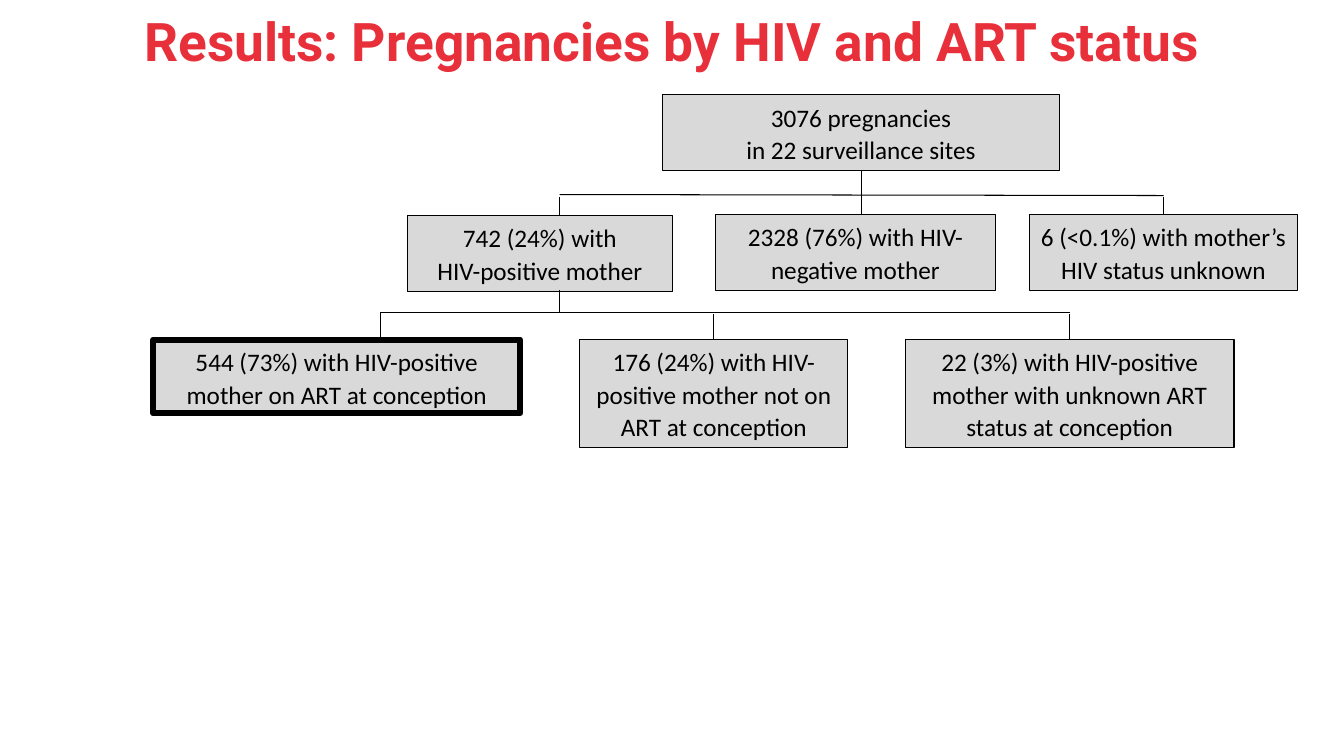
from dataclasses import dataclass
from typing import Optional

import pptx
import pptx.dml.color
import pptx.enum.shapes
import pptx.enum.text
import pptx.oxml
import pptx.oxml.ns
import pptx.util

PX = 9144  # EMU in one px, 100 px to the inch
COLORS = {"title": "E8303B", "fill": "D9D9D9", "ink": "000000"}
TOP, BOTTOM = 0, 2


@dataclass
class Box:
    text: str
    x: int
    y: int
    w: int
    h: int
    line: float = 0.75
    after: int = 0


@dataclass
class Link:
    x1: int
    y1: int
    x2: int
    y2: int
    box: Optional[str] = None  # box joined at the start
    side: int = TOP


# Groups of pregnancies, by level
BOXES = {
    "all": Box("3076 pregnancies\nin 22 surveillance sites", 657, 94, 394, 75),
    "pos": Box("742 (24%) with\nHIV-positive mother", 404, 214, 263, 75),
    "neg": Box("2328 (76%) with HIV-negative mother", 710, 213, 277, 75),
    "unknown": Box("6 (<0.1%) with mother’s HIV status unknown",
                   1021, 213, 266, 75),
    "art": Box("544 (73%) with HIV-positive mother on ART at conception",
               152, 337, 364, 73, line=4.5),
    "no art": Box("176 (24%) with HIV-positive mother not on ART at conception",
                  575, 337, 266, 107, after=8),
    "art unknown": Box("22 (3%) with HIV-positive mother with unknown ART "
                       "status at conception", 898, 337, 326, 107, after=8),
}

LINKS = [
    # HIV status
    Link(854, 169, 854, 213, "all", BOTTOM),
    Link(555, 193, 1154, 194),
    Link(555, 214, 555, 195),
    Link(1154, 213, 1154, 195, "unknown"),
    # ART status
    Link(555, 288, 555, 310),
    Link(377, 310, 1061, 310),
    Link(377, 337, 377, 310),
    Link(708, 337, 708, 312, "no art"),
    Link(1061, 337, 1061, 312, "art unknown"),
]


def px(n: int) -> pptx.util.Emu:
    return pptx.util.Emu(n * PX)


def color(name: str) -> pptx.dml.color.RGBColor:
    return pptx.dml.color.RGBColor.from_string(COLORS[name])


def style(par, face: str, size: int, tint: str, bold: bool = False) -> None:
    par.alignment = pptx.enum.text.PP_ALIGN.CENTER
    font = par.font
    font.name, font.size, font.bold = face, pptx.util.Pt(size), bold
    font.color.rgb = color(tint)


def draw_title(slide, text: str) -> None:
    frame = slide.shapes.add_textbox(px(0), px(-5), px(1333), px(90)).text_frame
    frame.word_wrap = True
    frame.vertical_anchor = pptx.enum.text.MSO_ANCHOR.MIDDLE
    frame.text = text
    style(frame.paragraphs[0], "Roboto", 38, "title", bold=True)


def draw_box(slide, box: Box):
    shape = slide.shapes.add_shape(
        pptx.enum.shapes.MSO_SHAPE.RECTANGLE,
        px(box.x), px(box.y), px(box.w), px(box.h))
    shape.shadow.inherit = False
    shape.fill.solid()
    shape.fill.fore_color.rgb = color("fill")
    shape.line.color.rgb = color("ink")
    shape.line.width = pptx.util.Pt(box.line)
    frame = shape.text_frame
    frame.word_wrap = True
    frame.auto_size = pptx.enum.text.MSO_AUTO_SIZE.SHAPE_TO_FIT_TEXT
    frame.vertical_anchor = pptx.enum.text.MSO_ANCHOR.TOP
    frame.text = box.text
    for par in frame.paragraphs:
        style(par, "Calibri", 18, "ink")
        par.line_spacing = 1.07
        par.space_after = pptx.util.Pt(box.after)
    return shape


def draw_link(slide, link: Link, shapes: dict) -> None:
    line = slide.shapes.add_connector(
        pptx.enum.shapes.MSO_CONNECTOR.STRAIGHT,
        px(link.x1), px(link.y1), px(link.x2), px(link.y2))
    line.line.color.rgb = color("ink")
    line.line.width = pptx.util.Pt(0.75)
    props = line._element.spPr
    props.append(pptx.oxml.parse_xml(
        "<a:effectLst %s/>" % pptx.oxml.ns.nsdecls("a")))
    if link.box:
        line.begin_connect(shapes[link.box], link.side)


def main() -> None:
    deck = pptx.Presentation()
    deck.slide_width, deck.slide_height = px(1333), px(750)
    slide = deck.slides.add_slide(deck.slide_layouts[6])
    draw_title(slide, "Results: Pregnancies by HIV and ART status")
    shapes = {name: draw_box(slide, box) for name, box in BOXES.items()}
    for link in LINKS:
        draw_link(slide, link, shapes)
    deck.save("out.pptx")


if __name__ == "__main__":
    main()
